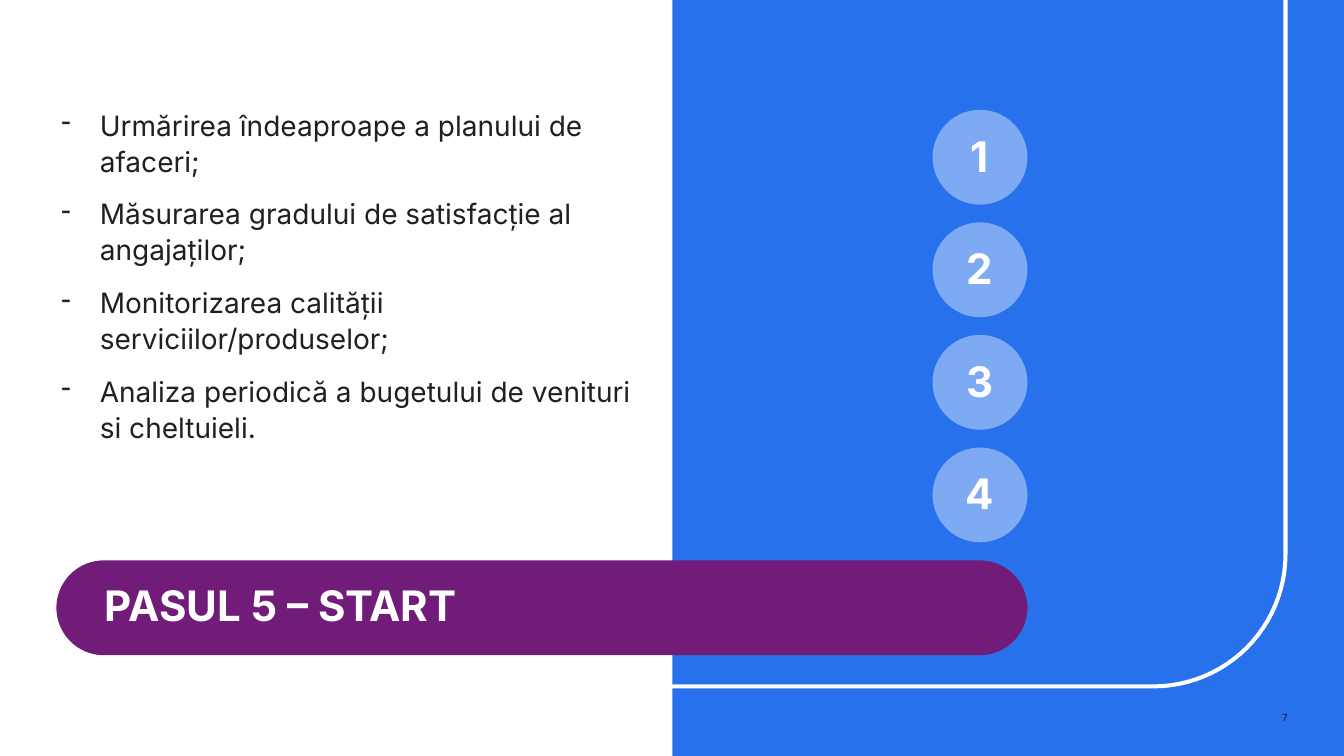
import math

import pptx
import pptx.chart.data
import pptx.dml.color
import pptx.enum.shapes
import pptx.enum.text
import pptx.oxml
import pptx.oxml.ns
import pptx.util
from pptx.util import Inches

RGBColor = pptx.dml.color.RGBColor
KIND = pptx.enum.shapes.MSO_SHAPE
ALIGN = pptx.enum.text.PP_ALIGN

BLUE = RGBColor(0x28, 0x71, 0xED)
PALE = RGBColor(0x7E, 0xAA, 0xF4)
PLUM = RGBColor(0x71, 0x1C, 0x79)
WHITE = RGBColor(0xFF, 0xFF, 0xFF)
DARK = RGBColor(0x20, 0x20, 0x20)
FONT = "Inter"

ITEMS = [
    "Urmărirea îndeaproape a planului de afaceri;",
    "Măsurarea gradului de satisfacție al angajaților;",
    "Monitorizarea calității serviciilor/produselor;",
    "Analiza periodică a bugetului de venituri si cheltuieli.",
]


def paint(shape, color):
    shape.shadow.inherit = False
    shape.fill.solid()
    shape.fill.fore_color.rgb = color
    shape.line.fill.background()


def add_form(slide, kind, box, color):
    shape = slide.shapes.add_shape(kind, *map(Inches, box))
    paint(shape, color)
    return shape


def add_box(slide, box):
    frame = slide.shapes.add_textbox(*map(Inches, box)).text_frame
    frame.word_wrap = True
    frame.margin_left = frame.margin_right = 0
    frame.margin_top = frame.margin_bottom = 0
    return frame


def add_run(para, text, size, color, bold=False):
    run = para.add_run()
    run.text = text
    font = run.font
    font.name, font.size, font.bold = FONT, pptx.util.Pt(size), bold
    font.color.rgb = color


def add_line(slide, box, text, size, color, align, bold=False, space=None):
    para = add_box(slide, box).paragraphs[0]
    para.alignment = align
    para.line_spacing = space
    add_run(para, text, size, color, bold)


def add_frame(slide, box, thick=0.04, radius=1.33, steps=24):
    """White band down the right side, round the corner and along the bottom."""
    left, top, width, height = box
    right, base = left + width, top + height
    mid_x, mid_y = right - radius, base - radius

    def arc(size):
        turns = [math.pi / 2 * i / steps for i in range(steps + 1)]
        return [(mid_x + size * math.cos(t), mid_y + size * math.sin(t))
                for t in turns]

    outer = [(right, top), *arc(radius), (left, base)]
    inner = [(left, base - thick), *reversed(arc(radius - thick))]
    points = [(Inches(x), Inches(y)) for x, y in outer + inner]
    pen = slide.shapes.build_freeform(Inches(right - thick), Inches(top))
    pen.add_line_segments(points, close=True)
    paint(pen.convert_to_shape(), WHITE)


def add_steps(slide, box, count):
    """Numbered discs spread evenly down the box."""
    left, top, size, height = box
    pitch = (height - size) / (count - 1)
    for i in range(count):
        y = top + i * pitch
        add_form(slide, KIND.OVAL, (left, y, size, size), PALE)
        add_line(slide, (left + 0.23, y + 0.25, 0.48, 0.43), str(i + 1),
                 30, WHITE, ALIGN.CENTER, True, 0.92)


def add_title(slide, box, text):
    left, top, width, height = box
    pill = add_form(slide, KIND.ROUNDED_RECTANGLE, box, PLUM)
    pill.adjustments[0] = 0.5
    add_line(slide, (left + 0.48, top + 0.24, width - 0.96, 0.5), text,
             30, WHITE, ALIGN.LEFT, True, 0.92)


def add_list(slide, box, items):
    frame = add_box(slide, box)
    for i, item in enumerate(items):
        para = frame.add_paragraph() if i else frame.paragraphs[0]
        para.line_spacing = 1.07
        para.space_after = pptx.util.Pt(12)
        props = para._p.get_or_add_pPr()
        props.set("marL", str(Inches(0.38)))
        props.set("indent", str(-Inches(0.38)))
        mark = pptx.oxml.parse_xml(
            "<a:buChar %s char='-'/>" % pptx.oxml.ns.nsdecls("a"))
        props.append(mark)
        add_run(para, item, 20, DARK)


def main():
    deck = pptx.Presentation()
    deck.slide_width, deck.slide_height = Inches(13.33), Inches(7.5)
    slide = deck.slides.add_slide(deck.slide_layouts[6])

    # Blue half with page number and white band
    add_form(slide, KIND.RECTANGLE, (6.67, 0, 6.66, 7.5), BLUE)
    add_line(slide, (12.36, 7.06, 0.41, 0.14), "7", 7, DARK, ALIGN.RIGHT)
    add_frame(slide, (0, 0, 12.77, 6.83))

    # Discs, title bar and list
    add_steps(slide, (9.25, 1.09, 0.94, 4.29), len(ITEMS))
    add_title(slide, (0.56, 5.56, 9.63, 0.94), "PASUL 5 – START")
    add_list(slide, (0.61, 1.05, 5.75, 3.48), ITEMS)

    deck.save("out.pptx")


if __name__ == "__main__":
    main()
